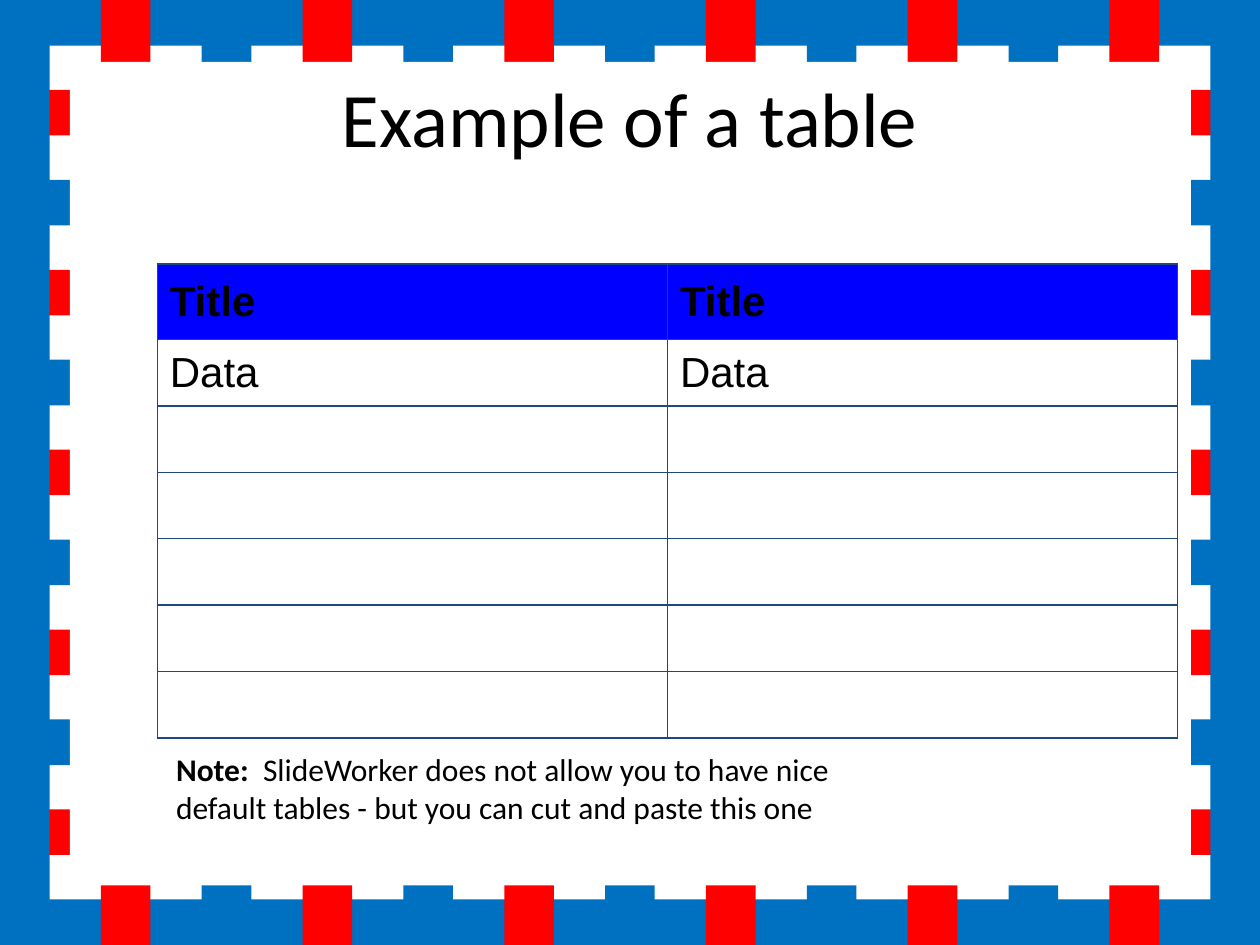
from lxml.etree import SubElement
from pptx import Presentation
from pptx.dml.color import RGBColor
from pptx.enum.shapes import MSO_SHAPE
from pptx.enum.text import MSO_ANCHOR, PP_ALIGN
from pptx.oxml.ns import qn
from pptx.util import Cm, Pt

WIDTH, HEIGHT = 25.4, 19.05
BLUE, RED, WHITE, BLACK = "0070C0", "FF0000", "FFFFFF", "000000"
HEADER_FILL, BORDER = "0000FF", "1F497D"


def color(hex_string):
    return RGBColor.from_string(hex_string)


def add_run(paragraph, text, **font_format):
    run = paragraph.add_run()
    run.text = text
    run.font.color.rgb = color(BLACK)
    for name, value in font_format.items():
        setattr(run.font, name, value)


presentation = Presentation()
presentation.slide_width, presentation.slide_height = Cm(WIDTH), Cm(HEIGHT)
slide = presentation.slides.add_slide(presentation.slide_layouts[5])

# Striped frame: horizontal bands, vertical bands, white panel
band_height, band_width = 0.92, 1
row_pitch = (HEIGHT - band_height) / 10
column_pitch = (WIDTH - band_width) / 12
bands = [(0, i * row_pitch, WIDTH, band_height, (BLUE, RED)[i % 2]) for i in range(11)]
bands += [(i * column_pitch, 0, band_width, HEIGHT, (BLUE, RED)[i % 2]) for i in range(13)]
panel = (1.41, 1.25, 22.6, 16.6, WHITE)
for left, top, width, height, fill in bands + [panel]:
    shape = slide.shapes.add_shape(
        MSO_SHAPE.RECTANGLE, Cm(left), Cm(top), Cm(width), Cm(height))
    shape.shadow.inherit = False
    shape.fill.solid()
    shape.fill.fore_color.rgb = color(fill)
    shape.line.fill.background()

# Title, brought in front of the frame
title = slide.shapes.title
title_box = {"left": Cm(1.27), "top": Cm(0.76), "width": Cm(22.86), "height": Cm(3.18)}
for name, value in title_box.items():
    setattr(title, name, value)
title.text_frame.vertical_anchor = MSO_ANCHOR.MIDDLE
paragraph = title.text_frame.paragraphs[0]
paragraph.alignment = PP_ALIGN.CENTER
add_run(paragraph, "Example of a table", name="Calibri", size=Pt(44))
title.element.getparent().append(title.element)

# Table
row_heights = [1.52] + [1.34] * 6
table = slide.shapes.add_table(
    len(row_heights), 2, Cm(3.17), Cm(5.32), Cm(20.57), Cm(sum(row_heights))).table
table.first_row = table.horz_banding = False
for row, height in zip(table.rows, row_heights):
    row.height = Cm(height)
row_texts = ["Title", "Data"]
for row_index, row in enumerate(table.rows):
    for cell in row.cells:
        cell.vertical_anchor = MSO_ANCHOR.MIDDLE
        cell_properties = cell._tc.get_or_add_tcPr()
        for side in ("a:lnL", "a:lnR", "a:lnT", "a:lnB"):
            line = SubElement(cell_properties, qn(side), w=str(Pt(1)))
            line_fill = SubElement(line, qn("a:solidFill"))
            SubElement(line_fill, qn("a:srgbClr"), val=BORDER)
        if row_index == 0:
            cell.fill.solid()
            cell.fill.fore_color.rgb = color(HEADER_FILL)
        else:
            cell.fill.background()
        if row_index < len(row_texts):
            add_run(cell.text_frame.paragraphs[0], row_texts[row_index],
                    name="Arial", size=Pt(24), bold=row_index == 0)

# Note
note = slide.shapes.add_textbox(Cm(3.3), Cm(14.99), Cm(15.42), Cm(1.8))
note.text_frame.word_wrap = True
paragraph = note.text_frame.paragraphs[0]
note_font = {"name": "Calibri", "size": Pt(18)}
add_run(paragraph, "Note:  ", bold=True, **note_font)
add_run(paragraph, "SlideWorker does not allow you to have nice default tables"
        " - but you can cut and paste this one", bold=False, **note_font)

presentation.save("out.pptx")
